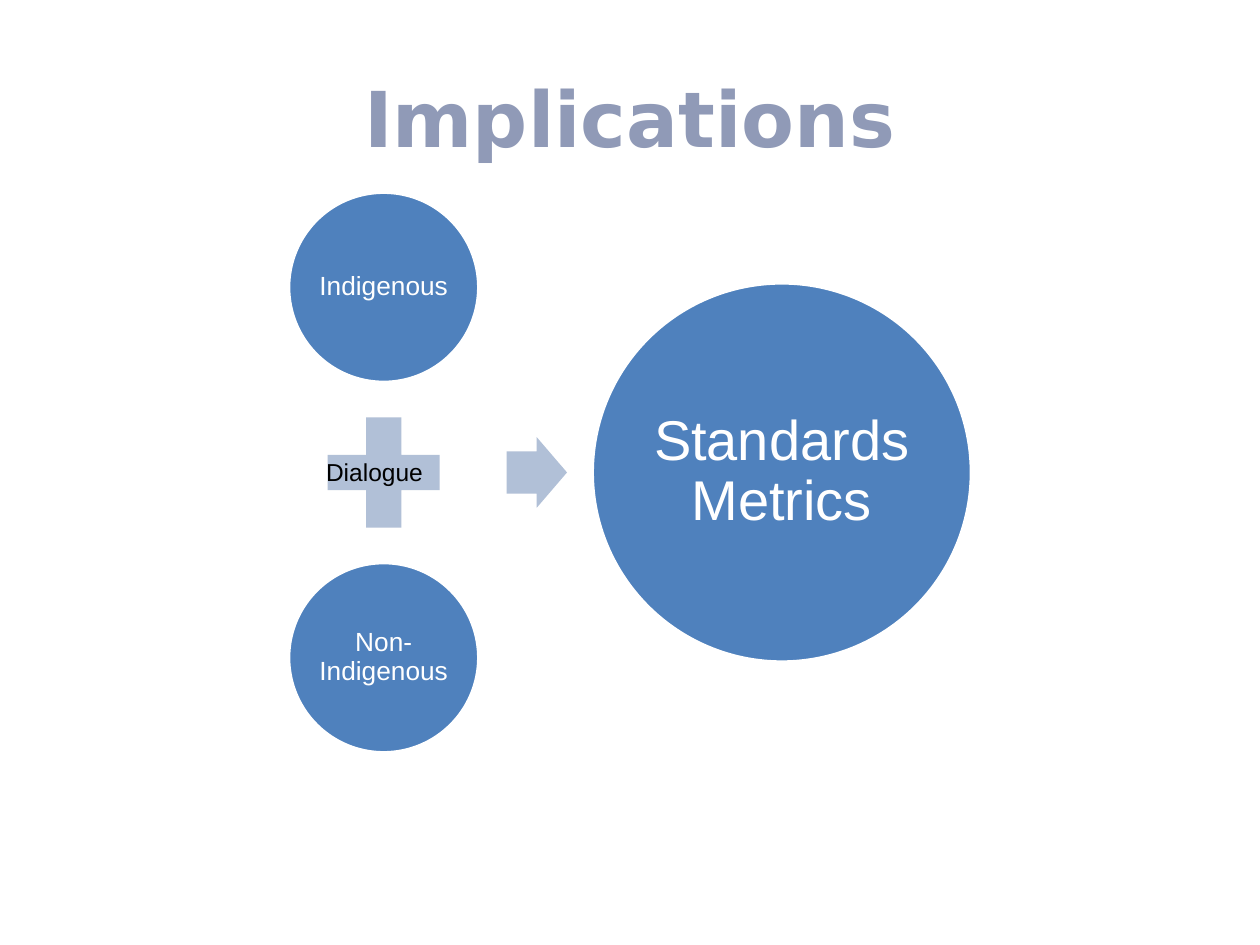
"""Build the Implications slide: two circles in dialogue lead to shared standards."""
from pptx import Presentation
from pptx.dml.color import RGBColor
from pptx.enum.shapes import MSO_SHAPE
from pptx.enum.text import MSO_ANCHOR, PP_ALIGN
from pptx.util import Inches, Pt

OVAL, PLUS, ARROW = MSO_SHAPE.OVAL, MSO_SHAPE.MATH_PLUS, MSO_SHAPE.RIGHT_ARROW
TOP, MIDDLE = MSO_ANCHOR.TOP, MSO_ANCHOR.MIDDLE
CENTER, RIGHT = PP_ALIGN.CENTER, PP_ALIGN.RIGHT

BLUE = RGBColor(0x4F, 0x81, 0xBD)
PALE_BLUE = RGBColor(0xB1, 0xC0, 0xD7)
TITLE_BLUE = RGBColor(0x90, 0x9A, 0xB7)
WHITE = RGBColor(0xFF, 0xFF, 0xFF)
BLACK = RGBColor(0, 0, 0)

TITLE = "Implications"
SOURCES = ["Indigenous", "Non-Indigenous"]
LINK = "Dialogue "
RESULT = "Standards Metrics"

WIDTH, HEIGHT = 10, 7.5
MIDLINE = HEIGHT / 2
SOURCE_LEFT, SOURCE_SIZE = 2.29, 1.51
SOURCE_CENTER = SOURCE_LEFT + SOURCE_SIZE / 2
PLUS_WIDTH, PLUS_HEIGHT = 1.21, 1.19
ARROW_LEFT, ARROW_WIDTH, ARROW_HEIGHT = 4.02, 0.48, 0.56
RESULT_LEFT, RESULT_SIZE = 4.7, 3.01
GAP = 0.12


def write(shape, text, size, color, font="Arial", bold=False, align=CENTER,
          anchor=MIDDLE, margins=(0.1, 0.1), spacing=1.0):
    frame = shape.text_frame
    frame.word_wrap = True
    frame.vertical_anchor = anchor
    frame.margin_left = frame.margin_right = Inches(margins[0])
    frame.margin_top = frame.margin_bottom = Inches(margins[1])
    paragraph = frame.paragraphs[0]
    paragraph.alignment = align
    paragraph.line_spacing = spacing
    run = paragraph.add_run()
    run.text = text
    run.font.name, run.font.size, run.font.bold = font, Pt(size), bold
    run.font.color.rgb = color


def add_centered(slide, kind, left, center_y, width, height, fill):
    shape = slide.shapes.add_shape(kind, Inches(left), Inches(center_y - height / 2),
                                   Inches(width), Inches(height))
    shape.shadow.inherit = False
    shape.fill.solid()
    shape.fill.fore_color.rgb = fill
    shape.line.fill.background()
    return shape


def add_circle(slide, text, left, center_y, diameter, size, margin):
    circle = add_centered(slide, OVAL, left, center_y, diameter, diameter, BLUE)
    circle.line.color.rgb = WHITE
    circle.line.width = Pt(2)
    write(circle, text, size, WHITE, margins=(margin, margin), spacing=0.9)


def add_text(slide, left, top, width, height):
    return slide.shapes.add_textbox(Inches(left), Inches(top), Inches(width), Inches(height))


def main():
    presentation = Presentation()
    presentation.slide_width, presentation.slide_height = Inches(WIDTH), Inches(HEIGHT)
    slide = presentation.slides.add_slide(presentation.slide_layouts[6])

    write(add_text(slide, 0.5, 0.3, WIDTH - 1, 1.25), TITLE, 44, TITLE_BLUE,
          font="DejaVu Sans", bold=True)

    offset = PLUS_HEIGHT / 2 + GAP + SOURCE_SIZE / 2
    for text, side in zip(SOURCES, (-1, 1)):
        add_circle(slide, text, SOURCE_LEFT, MIDLINE + side * offset, SOURCE_SIZE, 15, 0.02)

    plus = add_centered(slide, PLUS, SOURCE_CENTER - PLUS_WIDTH / 2, MIDLINE,
                        PLUS_WIDTH, PLUS_HEIGHT, PALE_BLUE)
    plus.adjustments[0] = 0.235
    arrow = add_centered(slide, ARROW, ARROW_LEFT, MIDLINE,
                         ARROW_WIDTH, ARROW_HEIGHT, PALE_BLUE)
    arrow.adjustments[0] = 0.6
    arrow.adjustments[1] = 0.5
    add_circle(slide, RESULT, RESULT_LEFT, MIDLINE, RESULT_SIZE, 32, 0.04)

    write(add_text(slide, 2.45, 3.58, 1.06, 0.34), LINK, 14, BLACK,
          align=RIGHT, anchor=TOP, margins=(0.1, 0.05))
    presentation.save("out.pptx")


if __name__ == "__main__":
    main()
